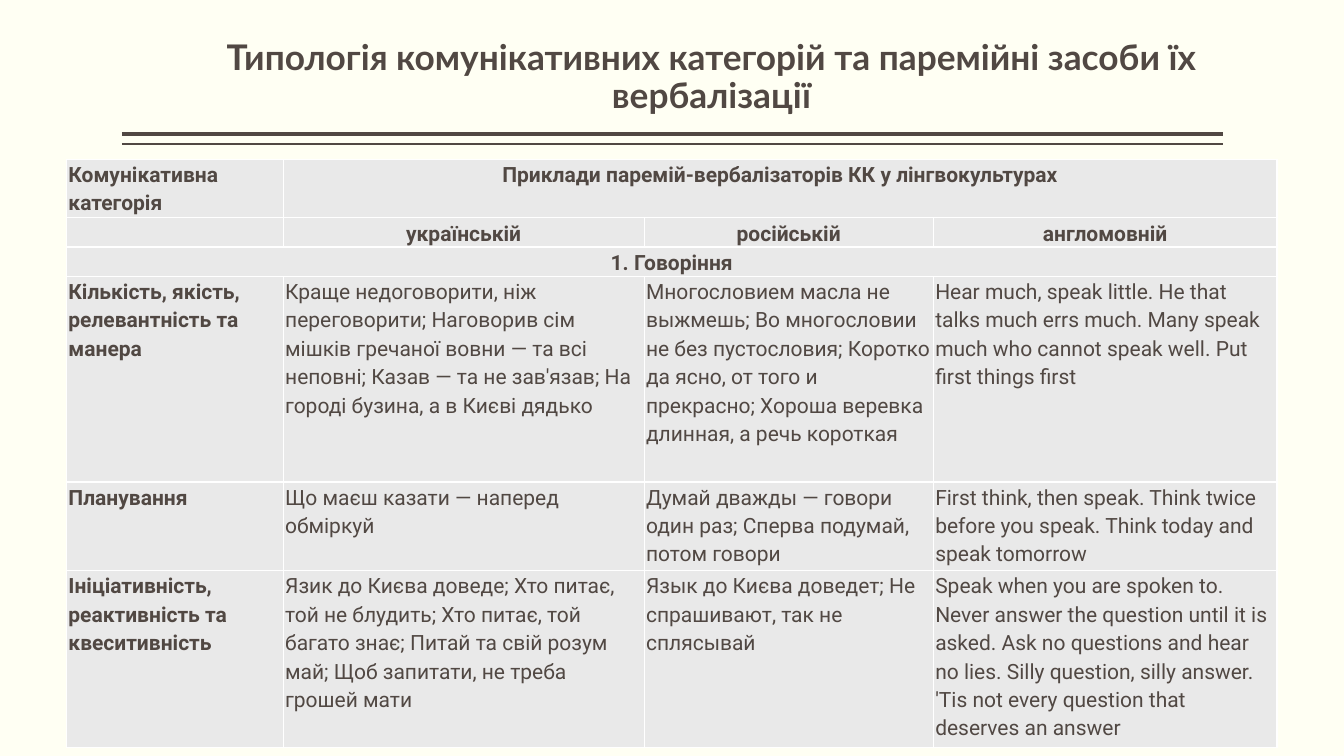
from lxml import etree
from pptx import Presentation, util as u
from pptx.dml.color import RGBColor
from pptx.enum import text as t
from pptx.oxml.ns import qn

INK, PAPER, CELL, BORDER = "514843", "FFFFF3", "E9E9E9", "FFFFFF"


def color(value):
    return RGBColor.from_string(value)


def write(frame, words, font="Roboto", size=15, bold=False,
          align=t.PP_ALIGN.LEFT, spacing=1.15, after=10):
    para = frame.paragraphs[0]
    para.alignment, para.line_spacing = align, spacing
    para.space_after = u.Pt(after)
    if words:
        span = para.add_run()
        span.text = words
        span.font.name, span.font.size, span.font.bold = font, u.Pt(size), bold
        span.font.color.rgb = color(INK)
    else:
        # An empty cell still needs its text size to keep the row low
        etree.SubElement(para._p, qn("a:endParaRPr"), sz=str(size * 100))


deck = Presentation()
deck.slide_width, deck.slide_height = u.Pt(960), u.Pt(540)
page = deck.slides.add_slide(deck.slide_layouts[5])
page.background.fill.solid()
page.background.fill.fore_color.rgb = color(PAPER)

# Double rule under the title
for y, width in ((95.8, 3), (103, 1)):
    rule = page.shapes.add_connector(1, u.Pt(87.1), u.Pt(y), u.Pt(873.4), u.Pt(y))
    rule.line.color.rgb = color(INK)
    rule.line.width = u.Pt(width)
    etree.SubElement(rule._element.spPr, qn("a:effectLst"))

# Title
title = page.shapes.title
title.left, title.top, title.width, title.height = map(u.Pt, (115.2, 27.4, 786.2, 86.4))
frame = title.text_frame
frame.word_wrap, frame.auto_size = True, t.MSO_AUTO_SIZE.NONE
frame.vertical_anchor = t.MSO_ANCHOR.BOTTOM
frame.margin_left = frame.margin_right = 0
frame.margin_top, frame.margin_bottom = u.Pt(3.6), u.Pt(30.8)
write(frame, "Типологія комунікативних категорій та паремійні засоби їх вербалізації",
      font="Lato", size=25.2, bold=True, align=t.PP_ALIGN.CENTER, spacing=0.9, after=0)

# Table contents
rows = [
    ["Комунікативна категорія",
     "Приклади паремій-вербалізаторів КК у лінгвокультурах", "", ""],
    ["", "українській", "російській", "англомовній"],
    ["1. Говоріння", "", "", ""],
    ["Кількість, якість, релевантність та манера",
     "Краще недоговорити, ніж переговорити; Наговорив сім мішків гречаної вовни — "
     "та всі неповні; Казав — та не зав'язав; На городі бузина, а в Києві дядько",
     "Многословием масла не выжмешь; Во многословии не без пустословия; Коротко да "
     "ясно, от того и прекрасно; Хороша веревка длинная, а речь короткая",
     "Hear much, speak little. He that talks much errs much. Many speak much who "
     "cannot speak well. Put first things first"],
    ["Планування",
     "Що маєш казати — наперед обміркуй",
     "Думай дважды — говори один раз; Сперва подумай, потом говори",
     "First think, then speak. Think twice before you speak. Think today and speak "
     "tomorrow"],
    ["Ініціативність, реактивність та квеситивність",
     "Язик до Києва доведе; Хто питає, той не блудить; Хто питає, той багато знає; "
     "Питай та свій розум май; Щоб запитати, не треба грошей мати",
     "Язык до Києва доведет; Не спрашивают, так не сплясывай",
     "Speak when you are spoken to. Never answer the question until it is asked. Ask "
     "no questions and hear no lies. Silly question, silly answer. 'Tis not every "
     "question that deserves an answer"],
]
widths = [154.8, 257.8, 206.6, 245.5]
heights = [41.8, 20.9, 20.9, 146.9, 63.4, 126]

# Table grid
table = page.shapes.add_table(len(rows), len(widths), u.Pt(47.5), u.Pt(113.8),
                              u.Pt(sum(widths)), u.Pt(sum(heights))).table
for column, width in zip(table.columns, widths):
    column.width = u.Pt(width)
for row, height in zip(table.rows, heights):
    row.height = u.Pt(height)
table.cell(0, 1).merge(table.cell(0, 3))
table.cell(2, 0).merge(table.cell(2, 3))

# Cells: text, fill and borders
for r, row in enumerate(rows):
    for c, words in enumerate(row):
        cell = table.cell(r, c)
        cell.margin_left = cell.margin_right = u.Pt(1.4)
        cell.margin_top = cell.margin_bottom = 0
        centered = r < 3 and (r, c) != (0, 0)
        write(cell.text_frame, words, bold=r < 3 or c == 0,
              align=t.PP_ALIGN.CENTER if centered else t.PP_ALIGN.LEFT)
        properties = cell._tc.get_or_add_tcPr()
        for side in ("L", "R", "T", "B"):
            edge = etree.SubElement(properties, qn(f"a:ln{side}"), w=str(u.Pt(1)))
            paint = etree.SubElement(edge, qn("a:solidFill"))
            etree.SubElement(paint, qn("a:srgbClr"), val=BORDER)
        cell.fill.solid()
        cell.fill.fore_color.rgb = color(CELL)

deck.save("out.pptx")
